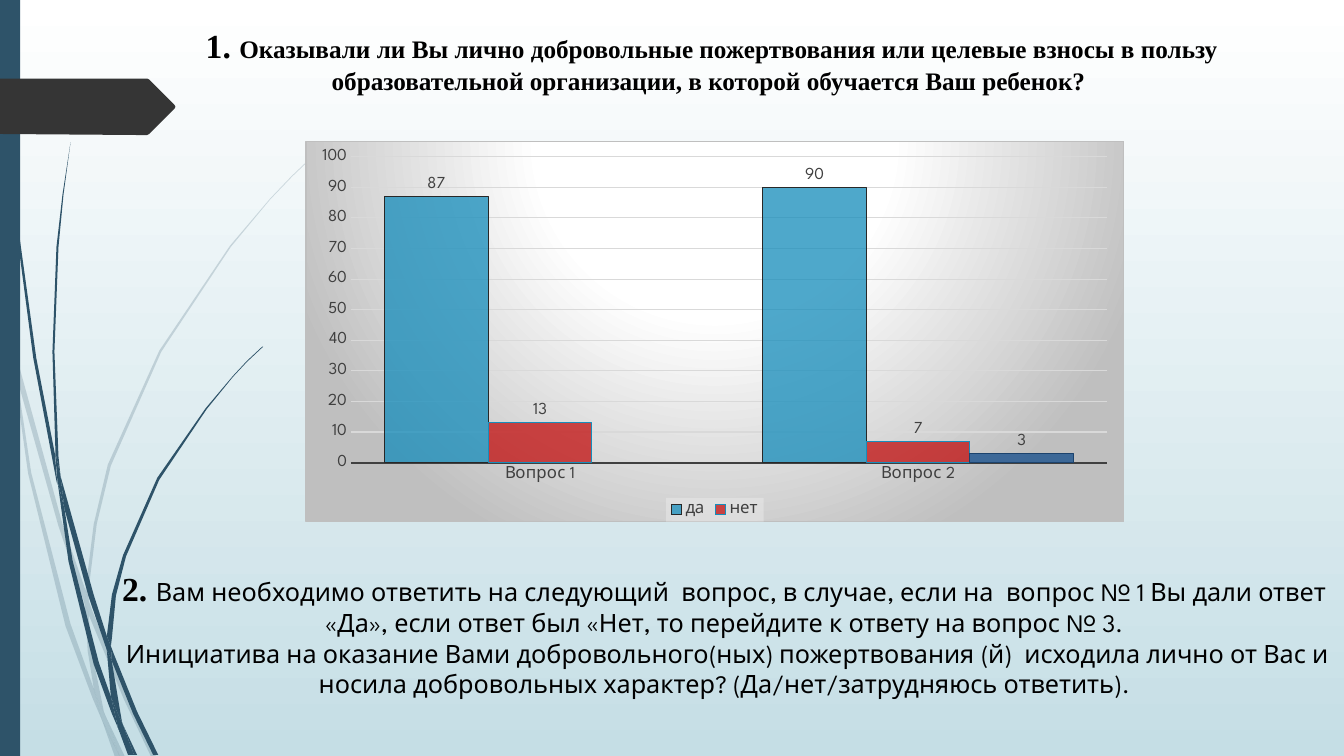
from pptx import Presentation
from pptx.chart.data import CategoryChartData
from pptx.dml.color import RGBColor
from pptx.enum.chart import XL_CHART_TYPE, XL_LABEL_POSITION, XL_LEGEND_POSITION, XL_TICK_MARK
from pptx.enum.shapes import MSO_SHAPE
from pptx.enum.text import MSO_ANCHOR, MSO_AUTO_SIZE, PP_ALIGN
from pptx.oxml import parse_xml
from pptx.oxml.ns import nsdecls, qn
from pptx.util import Inches, Pt

COLORS = {
    "bg_top": "FFFFFF", "bg_bottom": "C5DEE5", "stem": "2E5369", "tag": "353535",
    "text": "000000", "chart_text": "404040", "grid": "D9D9D9", "chart_edge": "BFBFBF",
    "legend": "F2F2F2",
}
SERIF, SANS = "Times New Roman", "League Spartan"

# Outlines of the stem pieces, as corner points in inches
PALE_STEMS = [
    [(0.11, 3.5), (0.09, 3.22), (0, 2.82), (0, 2.99), (0.1, 3.44)],
    [(0.58, 5.22), (0.84, 5.99), (0.85, 5.86), (0.62, 5.2), (0.14, 3.45), (0.17, 3.76)],
    [(0.92, 6.07), (0.88, 5.96), (0.88, 6.1), (1.23, 6.94), (1.5, 7.51), (1.55, 7.51), (1.27, 6.92)],
    [(1.19, 7.51), (1.24, 7.51), (1.05, 7.11)],
    [(0.93, 6.83), (0.7, 6.19), (0.31, 4.69), (0.17, 3.76), (0.11, 3.5), (0.28, 4.7),
     (0.65, 6.21), (0.92, 6.93), (1.01, 7.14), (0.99, 7.07)],
    [(0.84, 5.99), (0.87, 6.46), (0.93, 6.83), (0.96, 6.92), (1.05, 7.11), (1.03, 7.06),
     (0.91, 6.46), (0.88, 6.1), (0.88, 6.08)],
    [(0.88, 5.84), (0.96, 5.2), (1.1, 4.62), (1.6, 3.49), (2.29, 2.45), (2.68, 1.98), (2.9, 1.75),
     (3.12, 1.54), (3.12, 1.53), (2.89, 1.75), (2.68, 1.97), (2.28, 2.44), (1.58, 3.48),
     (1.07, 4.61), (0.93, 5.2), (0.85, 5.84), (0.85, 5.86), (0.88, 5.96)],
    [(1.01, 7.14), (1.14, 7.51), (1.19, 7.51)],
    [(0.88, 6.08), (0.88, 6.1), (0.88, 5.96), (0.85, 5.86), (0.84, 5.99)],
    [(0.96, 6.92), (0.93, 6.83), (0.99, 7.07), (1.01, 7.14), (1.19, 7.51), (1.05, 7.11)],
]
DARK_STEMS = [
    [(0.07, 1.1), (0.17, 2.33), (0.33, 3.55), (0.56, 4.77), (0.57, 4.81), (0.55, 4.57),
     (0.55, 4.53), (0.36, 3.55), (0.19, 2.32), (0.08, 1.09), (0.05, 0.48), (0.04, 0),
     (0.03, 0), (0.04, 0.48)],
    [(0.88, 5.92), (1.06, 6.45), (1.06, 6.33), (1.06, 6.31), (0.93, 5.9), (0.6, 4.72), (0.64, 5.05)],
    [(1.13, 6.49), (1.1, 6.41), (1.11, 6.56), (1.32, 7.08), (1.52, 7.49), (1.57, 7.49), (1.36, 7.06)],
    [(1.1, 6.91), (0.98, 6.57), (0.72, 5.56), (0.64, 5.05), (0.57, 4.77), (0.68, 5.57),
     (0.93, 6.59), (1.11, 7.08), (1.17, 7.22), (1.16, 7.17)],
    [(0.6, 4.72), (0.58, 4.53), (0.54, 3.49), (0.58, 2.45), (0.63, 1.93), (0.7, 1.41),
     (0.62, 1.93), (0.56, 2.45), (0.52, 3.49), (0.55, 4.49)],
    [(1.33, 7.49), (1.36, 7.49), (1.22, 7.19)],
    [(0.57, 4.77), (0.64, 5.05), (0.6, 4.72), (0.55, 4.49), (0.55, 4.53)],
    [(1.11, 6.33), (1.15, 5.91), (1.25, 5.52), (1.58, 4.76), (2.05, 4.06), (2.31, 3.74),
     (2.45, 3.59), (2.61, 3.44), (2.6, 3.44), (2.45, 3.58), (2.31, 3.73), (2.04, 4.05),
     (1.56, 4.74), (1.22, 5.51), (1.11, 5.9), (1.06, 6.31), (1.1, 6.41)],
    [(1.17, 7.22), (1.27, 7.49), (1.31, 7.49)],
    [(1.06, 6.45), (1.1, 6.91), (1.16, 7.06), (1.22, 7.19), (1.21, 7.16), (1.11, 6.56), (1.09, 6.51)],
    [(1.06, 6.45), (1.09, 6.51), (1.11, 6.56), (1.1, 6.41), (1.06, 6.31), (1.06, 6.33)],
    [(1.16, 7.06), (1.1, 6.91), (1.16, 7.17), (1.17, 7.22), (1.3, 7.49), (1.33, 7.49), (1.22, 7.19)],
]
TAG = [(1.73, 1.08), (1.48, 1.33), (1.46, 1.34), (1.36, 1.34), (0, 1.33), (0, 0.78),
       (1.36, 0.78), (1.46, 0.78), (1.48, 0.79), (1.73, 1.04), (1.74, 1.06)]

CATEGORIES = ["Вопрос 1", "Вопрос 2"]
# name, values, fill, opacity in percent, outline
SERIES = [
    ("да", (87, 90), "178DBB", 76, "282828"),
    ("нет", (13, 7), "C00000", 70, "178DBB"),
    ("Series 3", (None, 3), "265991", 85, "1C436D"),
]

QUESTION_1 = [[
    ("1. ", 24, SERIF, True),
    ("Оказывали ли Вы лично добровольные пожертвования или целевые взносы в пользу "
     "образовательной организации, в которой обучается Ваш ребенок? ", 18, SERIF, True),
]]
QUESTION_2 = [
    [("2. ", 24, SERIF, True),
     ("Вам необходимо ответить на следующий  вопрос, в случае, если на  вопрос № 1 Вы дали "
      "ответ «Да», если ответ был «Нет, то перейдите к ответу на вопрос № 3.", 18, SANS, False)],
    [(" Инициатива на оказание Вами добровольного(ных) пожертвования (й)  исходила лично от Вас "
      "и носила добровольных характер? (Да/нет/затрудняюсь ответить).", 18, SANS, False)],
]


def rgb(name):
    return RGBColor.from_string(COLORS.get(name, name))


def set_opacity(element, percent):
    """Make the first solid colour inside element partly transparent."""
    color = element.find(".//" + qn("a:srgbClr"))
    color.append(parse_xml(f'<a:alpha {nsdecls("a")} val="{percent * 1000}"/>'))


def paint(sp, color):
    sp.shadow.inherit = False
    sp.fill.solid()
    sp.fill.fore_color.rgb = rgb(color)
    sp.line.fill.background()


def add_outline(slide, points, color, opacity=100):
    corners = [(Inches(x), Inches(y)) for x, y in points]
    builder = slide.shapes.build_freeform(*corners[0])
    builder.add_line_segments(corners[1:], close=True)
    sp = builder.convert_to_shape()
    paint(sp, color)
    if opacity < 100:
        set_opacity(sp.element, opacity)


def write_text(sp, paragraphs):
    tf = sp.text_frame
    tf.word_wrap = True
    tf.auto_size = MSO_AUTO_SIZE.NONE
    tf.vertical_anchor = MSO_ANCHOR.TOP
    for i, runs in enumerate(paragraphs):
        p = tf.paragraphs[0] if i == 0 else tf.add_paragraph()
        p.alignment = PP_ALIGN.CENTER
        for text, size, font, bold in runs:
            r = p.add_run()
            r.text = text
            style_font(r.font, size, "text", font)
            r.font.bold = bold


def style_font(font, size=12, color="chart_text", name=SANS):
    font.size, font.name = Pt(size), name
    font.color.rgb = rgb(color)


def style_line(line, color, width=0.75):
    line.color.rgb = rgb(color)
    line.width = Pt(width)


def style_axes(chart):
    for axis in (chart.category_axis, chart.value_axis):
        axis.major_tick_mark = axis.minor_tick_mark = XL_TICK_MARK.NONE
        style_font(axis.tick_labels.font)
    style_line(chart.category_axis.format.line, "chart_text", 1.5)
    axis = chart.value_axis
    axis.minimum_scale, axis.maximum_scale, axis.major_unit = 0, 100, 10
    axis.format.line.fill.background()
    style_line(axis.major_gridlines.format.line, "grid")


def style_legend(chart):
    chart.has_legend = True
    legend = chart.legend
    legend.position = XL_LEGEND_POSITION.BOTTOM
    legend.include_in_layout = False
    style_font(legend.font)
    element = legend._element
    element.find(qn("c:legendPos")).addnext(parse_xml(
        f'<c:legendEntry {nsdecls("c")}><c:idx val="2"/><c:delete val="1"/></c:legendEntry>'))
    element.find(qn("c:txPr")).addprevious(parse_xml(
        f'<c:spPr {nsdecls("c", "a")}><a:solidFill><a:srgbClr val="{COLORS["legend"]}">'
        '<a:alpha val="39000"/></a:srgbClr></a:solidFill></c:spPr>'))


def style_chart_area(chart):
    """Fill the chart with a round gradient and fix the place of its plot."""
    stops = "".join(f'<a:gs pos="{pos}000"><a:srgbClr val="{COLORS[name]}"/></a:gs>'
                    for pos, name in ((0, "bg_top"), (39, "bg_top"), (100, "chart_edge")))
    body = chart._chartSpace.find(qn("c:chart"))
    body.addnext(parse_xml(
        f'<c:spPr {nsdecls("c", "a")}><a:gradFill><a:gsLst>{stops}</a:gsLst><a:path path="circle">'
        '<a:fillToRect l="50000" t="-80000" r="50000" b="180000"/></a:path></a:gradFill>'
        f'<a:ln w="9525"><a:solidFill><a:srgbClr val="{COLORS["chart_edge"]}"/></a:solidFill>'
        '</a:ln></c:spPr>'))
    plot_area = body.find(qn("c:plotArea"))
    for layout in plot_area.findall(qn("c:layout")):
        plot_area.remove(layout)
    place = "".join(f'<c:{tag} val="{val}"/>' for tag, val in (
        ("layoutTarget", "inner"), ("xMode", "edge"), ("yMode", "edge"),
        ("x", 0.055), ("y", 0.04), ("w", 0.925), ("h", 0.805)))
    plot_area.insert(0, parse_xml(
        f'<c:layout {nsdecls("c")}><c:manualLayout>{place}</c:manualLayout></c:layout>'))


def add_answer_chart(slide):
    data = CategoryChartData()
    data.categories = CATEGORIES
    for name, values, *_ in SERIES:
        data.add_series(name, values)
    chart = slide.shapes.add_chart(XL_CHART_TYPE.COLUMN_CLUSTERED, Inches(3.03), Inches(1.4),
                                   Inches(8.12), Inches(3.78), data).chart
    chart.has_title = False
    style_font(chart.font, 10, "text")
    plot = chart.plots[0]
    plot.gap_width, plot.overlap, plot.vary_by_categories = 65, 0, False
    for series, (_, _, fill, opacity, outline) in zip(plot.series, SERIES):
        series.invert_if_negative = False
        series.format.fill.solid()
        series.format.fill.fore_color.rgb = rgb(fill)
        set_opacity(series._element, opacity)
        style_line(series.format.line, outline)
        labels = series.data_labels
        labels.show_value = True
        labels.position = XL_LABEL_POSITION.OUTSIDE_END
        style_font(labels.font)
    style_axes(chart)
    style_legend(chart)
    style_chart_area(chart)


def set_background(slide):
    fill = slide.background.fill
    fill.gradient()
    fill.gradient_angle = 270
    for stop, color in zip(fill.gradient_stops, ("bg_top", "bg_bottom")):
        stop.color.rgb = rgb(color)


def main():
    prs = Presentation()
    prs.slide_width, prs.slide_height = Inches(13.33), Inches(7.5)
    slide = prs.slides.add_slide(prs.slide_layouts[5])
    set_background(slide)
    for stems, opacity in ((PALE_STEMS, 20), (DARK_STEMS, 100)):
        for points in stems:
            add_outline(slide, points, "stem", opacity)
    paint(slide.shapes.add_shape(MSO_SHAPE.RECTANGLE, 0, 0, Inches(0.2), Inches(7.5)), "stem")
    add_outline(slide, TAG, "tag")
    add_answer_chart(slide)
    title = slide.shapes.title
    title.left, title.top, title.width, title.height = map(Inches, (1.21, 0.2, 11.7, 0.81))
    write_text(title, QUESTION_1)
    write_text(slide.shapes.add_textbox(*map(Inches, (1.04, 5.58, 12.29, 2.12))), QUESTION_2)
    prs.save("out.pptx")


if __name__ == "__main__":
    main()
